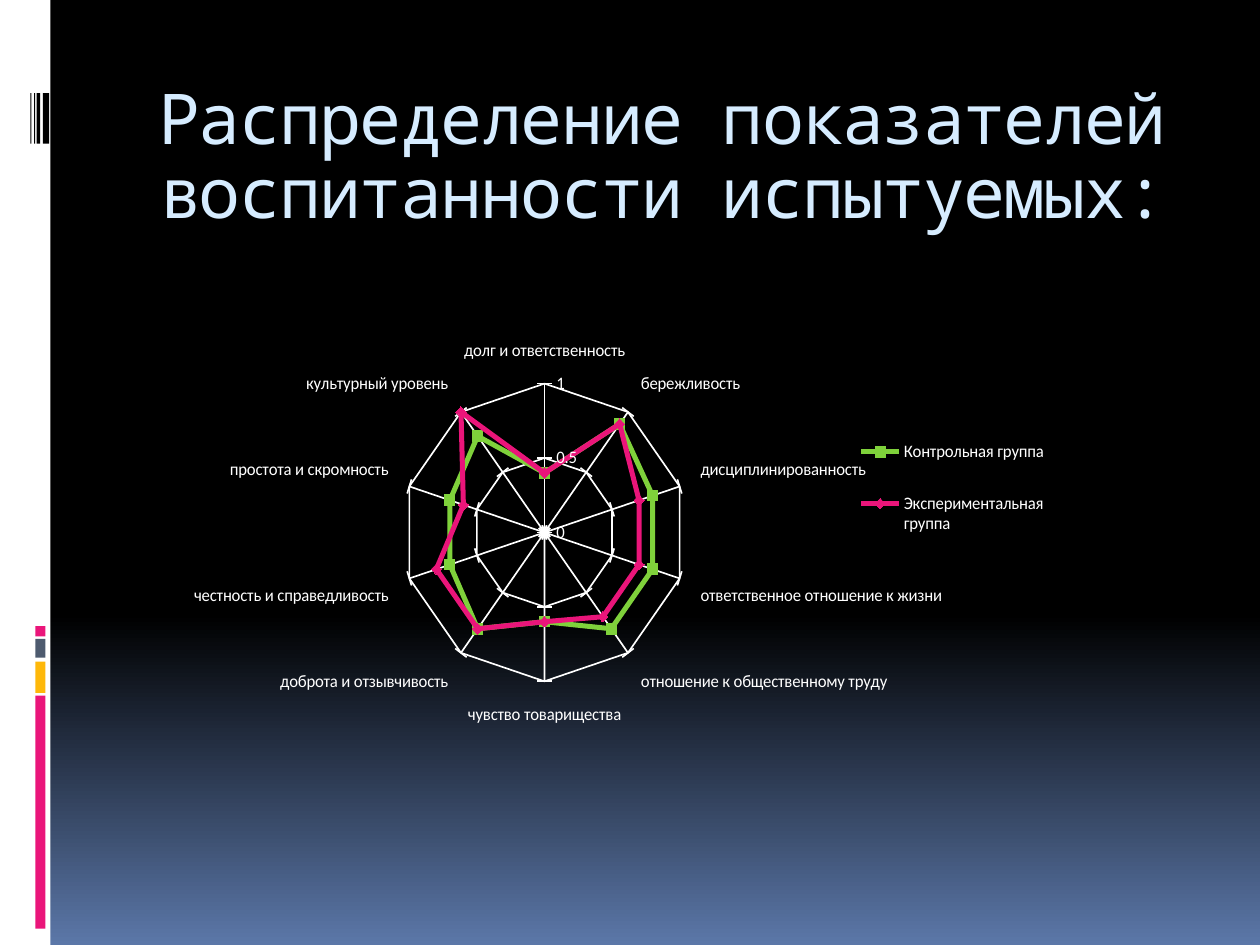
from lxml import etree
from pptx import Presentation
from pptx.chart.data import CategoryChartData
from pptx.dml.color import RGBColor
from pptx.enum.chart import (XL_CHART_TYPE as Chart, XL_LEGEND_POSITION as Legend,
                             XL_MARKER_STYLE as Marker, XL_TICK_MARK as Tick)
from pptx.enum.shapes import MSO_SHAPE as Shape
from pptx.enum.text import MSO_ANCHOR as Anchor, PP_ALIGN as Align
from pptx.oxml.ns import qn
from pptx.util import Inches, Pt

COLORS = {"white": "FFFFFF", "black": "000000", "pink": "EA157A", "amber": "FEB80A",
          "slate": "4E5B6F", "blue": "5B77A8", "title": "D6ECFF", "green": "7FD13B"}
CATEGORIES = ["долг и ответственность", "бережливость", "дисциплинированность",
              "ответственное отношение к жизни", "отношение к общественному труду",
              "чувство товарищества", "доброта и отзывчивость",
              "честность и справедливость", "простота и скромность", "культурный уровень"]
GROUPS = [
    ("Контрольная группа", [0.4, 0.9, 0.8, 0.8, 0.8, 0.6, 0.8, 0.7, 0.7, 0.8],
     "green", Marker.SQUARE),
    ("Экспериментальная группа", [0.4, 0.9, 0.7, 0.7, 0.7, 0.6, 0.8, 0.8, 0.6, 1],
     "pink", Marker.DIAMOND),
]


def rgb(name):
    return RGBColor.from_string(COLORS[name])


def set_background(s):
    fill = s.background.fill
    fill.gradient()
    fill.gradient_angle = 270
    for stop, position, color in zip(fill.gradient_stops, (0.65, 1), ("black", "blue")):
        stop.position = position
        stop.color.rgb = rgb(color)


def add_bar(s, x, y, w, h, color):
    sp = s.shapes.add_shape(Shape.RECTANGLE, Inches(x), Inches(y), Inches(w), Inches(h))
    sp.shadow.inherit = False
    sp.fill.solid()
    sp.fill.fore_color.rgb = rgb(color)
    sp.line.fill.background()


def add_side_strip(s, x, y, w, h):
    """White strip with stacked colour blocks and a small barcode."""
    add_bar(s, x, y, w, h, "white")
    for top, height, color in [(5.52, 1.85, "pink"), (5.25, 0.25, "amber"),
                               (5.07, 0.15, "slate"), (4.97, 0.08, "pink")]:
        add_bar(s, x + 0.28, y + top, 0.08, height, color)
    for left, width in [(0.34, 0.05), (0.29, 0.03), (0.27, 0.01), (0.24, 0.01)]:
        add_bar(s, x + left, y + 0.74, width, 0.4, "black")


def add_title(s, x, y, w, h):
    sp = s.shapes.title
    sp.left, sp.top, sp.width, sp.height = map(Inches, (x, y, w, h))
    tf = sp.text_frame
    tf.word_wrap = True
    tf.vertical_anchor = Anchor.TOP
    tf.margin_top = Inches(0.12)
    p = tf.paragraphs[0]
    p.alignment = Align.CENTER
    p.line_spacing = 0.88
    r = p.add_run()
    r.text = "Распределение показателей воспитанности испытуемых: "
    r.font.size = Pt(40)
    r.font.name = "Noto Sans Mono"
    r.font.color.rgb = rgb("title")
    r._r.get_or_add_rPr().set("spc", "-100")


def set_layout(element, x, y, w, h, inner=False):
    """Place a plot area or legend by fractions of the chart."""
    for old in element.findall(qn("c:layout")):
        element.remove(old)
    layout = etree.Element(qn("c:layout"))
    manual = etree.SubElement(layout, qn("c:manualLayout"))
    values = {"layoutTarget": "inner"} if inner else {}
    values.update(xMode="edge", yMode="edge", x=x, y=y, w=w, h=h)
    for tag, value in values.items():
        etree.SubElement(manual, qn(f"c:{tag}")).set("val", str(value))
    element.insert(0 if inner else 1, layout)


def format_axis(axis, tick):
    axis.has_major_gridlines = True
    axis.major_tick_mark = tick
    for line in (axis.format.line, axis.major_gridlines.format.line):
        line.color.rgb = rgb("white")
        line.width = Pt(1)


def add_radar(s, x, y, w, h):
    data = CategoryChartData()
    data.categories = CATEGORIES
    for name, values, *_ in GROUPS:
        data.add_series(name, values)
    chart = s.shapes.add_chart(Chart.RADAR_MARKERS, Inches(x), Inches(y),
                               Inches(w), Inches(h), data).chart
    chart.has_title = False
    chart.font.name = "Calibri"
    chart.font.size = Pt(10)
    chart.font.color.rgb = rgb("white")

    plot = chart.plots[0]
    plot.vary_by_categories = False
    for series, (*_, color, marker) in zip(plot.series, GROUPS):
        series.smooth = False
        series.format.line.color.rgb = rgb(color)
        series.format.line.width = Pt(3)
        series.marker.style = marker
        series.marker.size = 6
        series.marker.format.fill.solid()
        series.marker.format.fill.fore_color.rgb = rgb(color)
        series.marker.format.line.color.rgb = rgb(color)

    format_axis(chart.category_axis, Tick.OUTSIDE)
    format_axis(chart.value_axis, Tick.CROSS)
    axis = chart.value_axis
    axis.minimum_scale, axis.maximum_scale, axis.major_unit = 0, 1, 0.5
    axis.tick_labels.number_format = "General"
    axis.tick_labels.number_format_is_linked = False

    chart.has_legend = True
    chart.legend.position = Legend.RIGHT
    chart.legend.include_in_layout = False
    set_layout(chart.legend._element, 0.74, 0.25, 0.25, 0.3)
    plot_area = chart._chartSpace.chart.plotArea
    set_layout(plot_area, 0.203, 0.151, 0.342, 0.672, inner=True)


def main():
    prs = Presentation()
    prs.slide_width, prs.slide_height = Inches(10), Inches(7.5)
    s = prs.slides.add_slide(prs.slide_layouts[5])
    set_background(s)
    add_side_strip(s, 0, 0, 0.4, 7.5)
    add_title(s, 1, 0.56, 8.5, 1)
    add_radar(s, 1.54, 2.23, 6.91, 4.1)
    prs.save("out.pptx")


if __name__ == "__main__":
    main()
